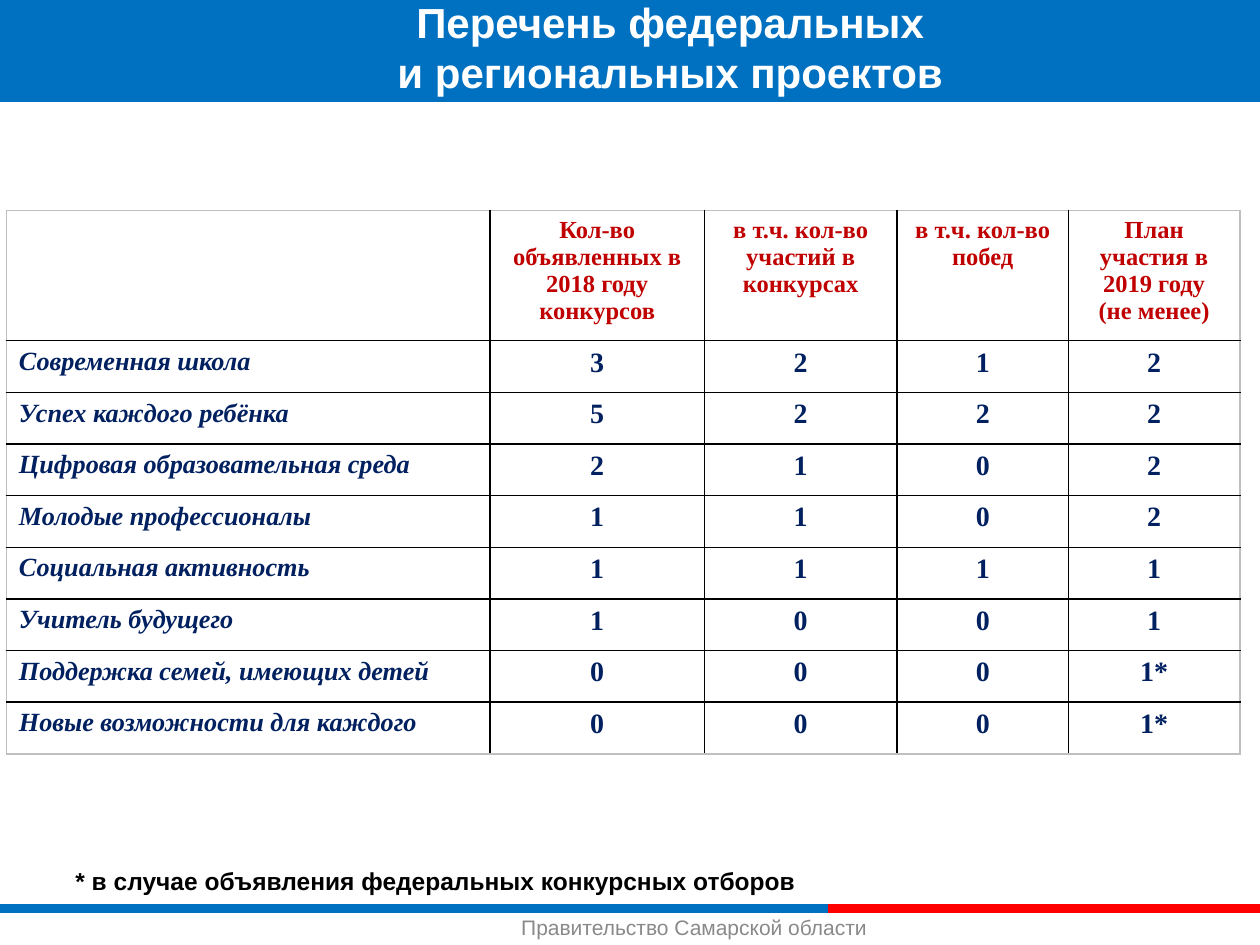
from lxml import etree
from pptx import Presentation, util as u
from pptx.dml.color import RGBColor
from pptx.enum import shapes, text
from pptx.oxml.ns import qn

COLORS = {"blue": "0070C1", "red": "FF0000", "header": "C00000", "navy": "002060",
          "white": "FFFFFF", "black": "000000", "gray": "898989", "frame": "BFBFBF"}
LEFT, CENTER = text.PP_ALIGN.LEFT, text.PP_ALIGN.CENTER


def write(frame, content, size, color, font="Arial", bold=True, italic=False, align=LEFT):
    """Fill a text frame; a vertical tab in the content is a line break."""
    frame.word_wrap = True
    frame.text = content
    for paragraph in frame.paragraphs:
        paragraph.alignment = align
        for run in paragraph.runs:
            run.font.size, run.font.name = u.Pt(size), font
            run.font.bold, run.font.italic = bold, italic
            run.font.color.rgb = RGBColor.from_string(COLORS[color])


def draw_border(cell, side, color, width):
    line = etree.SubElement(cell._tc.get_or_add_tcPr(), qn("a:" + side), w=str(u.Pt(width)))
    fill = etree.SubElement(line, qn("a:solidFill"))
    etree.SubElement(fill, qn("a:srgbClr"), val=COLORS[color])


deck = Presentation()
deck.slide_width, deck.slide_height = u.Inches(10), u.Inches(7.5)
slide = deck.slides.add_slide(deck.slide_layouts[6])

# Two-colour rule above the footer
for start, end, color in [(0, 6.57, "blue"), (6.57, 10, "red")]:
    rule = slide.shapes.add_connector(shapes.MSO_CONNECTOR.STRAIGHT, u.Inches(start),
                                      u.Inches(7.21), u.Inches(end), u.Inches(7.21))
    rule.line.color.rgb = RGBColor.from_string(COLORS[color])
    rule.line.width = u.Pt(5)
    etree.SubElement(rule._element.spPr, qn("a:effectLst"))

# Footer
footer = slide.shapes.add_textbox(u.Inches(2.24), u.Inches(7.21),
                                  u.Inches(6.54), u.Inches(0.29)).text_frame
footer.margin_left = footer.margin_right = u.Inches(0.05)
footer.margin_top = footer.margin_bottom = u.Inches(0.05)
write(footer, "Правительство Самарской области", 12, "gray", bold=False, align=CENTER)

# Title band
band = slide.shapes.add_shape(shapes.MSO_SHAPE.RECTANGLE, 0, u.Inches(-0.03),
                              u.Inches(10), u.Inches(0.84))
band.shadow.inherit = False
band.fill.solid()
band.fill.fore_color.rgb = RGBColor.from_string(COLORS["blue"])
band.line.fill.background()

# Projects table
headings = ["", "Кол-во объявленных в 2018 году конкурсов", "в т.ч. кол-во участий в конкурсах",
            "в т.ч. кол-во побед", "План участия в 2019 году\v(не менее)"]
projects = [
    ["Современная школа", "3", "2", "1", "2"],
    ["Успех каждого ребёнка", "5", "2", "2", "2"],
    ["Цифровая образовательная среда", "2", "1", "0", "2"],
    ["Молодые профессионалы", "1", "1", "0", "2"],
    ["Социальная активность", "1", "1", "1", "1"],
    ["Учитель будущего", "1", "0", "0", "1"],
    ["Поддержка семей, имеющих детей", "0", "0", "0", "1*"],
    ["Новые возможности для каждого", "0", "0", "0", "1*"],
]
rows = [headings] + projects
widths = [3.84, 1.7, 1.53, 1.36, 1.36]
last_row, last_col = len(rows) - 1, len(widths) - 1
table = slide.shapes.add_table(len(rows), len(widths), u.Inches(0.05), u.Inches(1.67),
                               u.Inches(9.8), u.Inches(4.28)).table
table.first_row = table.horz_banding = False
for column, width in zip(table.columns, widths):
    column.width = u.Inches(width)
for r, values in enumerate(rows):
    table.rows[r].height = u.Inches(0.41 if r else 1.03)
    for c, value in enumerate(values):
        cell = table.cell(r, c)
        if r == 0:
            style = dict(size=14, color="header", align=CENTER)
        elif c == 0:
            style = dict(size=15, color="navy", italic=True)
        else:
            style = dict(size=16, color="navy", align=CENTER)
        write(cell.text_frame, value, font="Times New Roman", **style)
        outer = {"lnL": c == 0, "lnR": c == last_col, "lnT": r == 0, "lnB": r == last_row}
        for side, on_frame in outer.items():
            draw_border(cell, side, "frame" if on_frame else "black", 1)
        cell.fill.background()

# Title
title = slide.shapes.add_textbox(u.Inches(1.09), u.Inches(-0.11),
                                 u.Inches(8.56), u.Inches(0.87)).text_frame
title.margin_top, title.margin_right = u.Inches(0.08), u.Inches(0.2)
write(title, "Перечень федеральных\nи региональных проектов", 24, "white", align=CENTER)

# Footnote
footnote = slide.shapes.add_textbox(u.Inches(0.5), u.Inches(6.82),
                                    u.Inches(8.39), u.Inches(0.35)).text_frame
write(footnote, "* в случае объявления федеральных конкурсных отборов", 14, "black")

deck.save("out.pptx")
